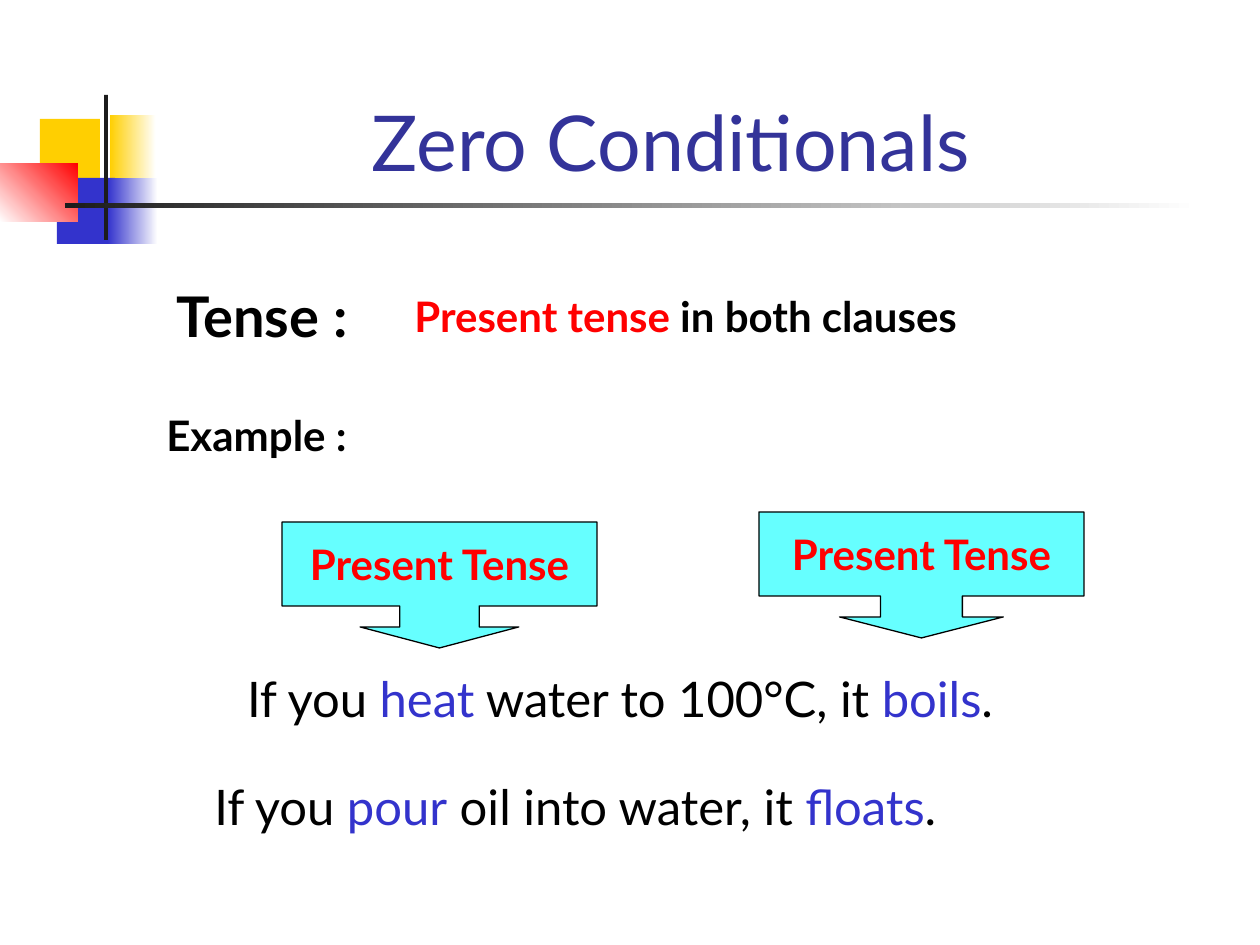
import pptx
import pptx.util
import pptx.dml.color
import pptx.enum.shapes
import pptx.enum.text
import pptx.oxml.ns
import lxml.etree

PX = 914400 / 126
BLACK, RED, BLUE = "000000", "FF0000", "3333CC"
YELLOW, WHITE, DARK = "FFCF01", "FFFFFF", "1C1C1C"
SHAPES = pptx.enum.shapes.MSO_SHAPE
ALIGN = pptx.enum.text.PP_ALIGN
ANCHOR = pptx.enum.text.MSO_ANCHOR


def rgb(color):
    return pptx.dml.color.RGBColor.from_string(color)


def write(tf, runs, size, bold=False, align=ALIGN.LEFT):
    """Fill the first paragraph with (text, color) runs."""
    p = tf.paragraphs[0]
    p.alignment = align
    for text, color in runs:
        r = p.add_run()
        r.text = text
        r.font.name = "Lato"
        r.font.size = pptx.util.Pt(size)
        r.font.bold = bold
        r.font.color.rgb = rgb(color)
    return p


prs = pptx.Presentation()
prs.slide_width = round(1260 * PX)
prs.slide_height = round(945 * PX)
slide = prs.slides.add_slide(prs.slide_layouts[1])
title, body = slide.placeholders

# Corner ornament: (box, colors from start to end, gradient angle)
ornament = [
    ((40, 119, 60, 65), [YELLOW], 0),
    ((110, 115, 46, 65), [YELLOW, WHITE], 0),
    ((57, 178, 58, 66), [BLUE], 0),
    ((108, 178, 50, 66), [BLUE, WHITE], 0),
    ((0, 163, 78, 59), [WHITE, RED], 45),
    ((104, 95, 4, 145), [DARK], 0),
    ((65, 203, 1134, 5), [DARK, WHITE], 0),
]
for box, colors, angle in ornament:
    sp = slide.shapes.add_shape(SHAPES.RECTANGLE, *[round(v * PX) for v in box])
    sp.shadow.inherit = False
    sp.line.fill.background()
    if len(colors) == 1:
        sp.fill.solid()
        sp.fill.fore_color.rgb = rgb(colors[0])
    else:
        sp.fill.gradient()
        sp.fill.gradient_angle = angle
        for stop, color, position in zip(sp.fill.gradient_stops, colors, (0, 1)):
            stop.color.rgb = rgb(color)
            stop.position = position

# Title and body
for sp, box in [(title, (134, 35, 1074, 158)), (body, (164, 275, 1071, 567))]:
    sp.left, sp.top, sp.width, sp.height = [round(v * PX) for v in box]
title.text_frame.vertical_anchor = ANCHOR.BOTTOM
write(title.text_frame, [("Zero Conditionals", "333399")], 44, align=ALIGN.CENTER)
p = write(body.text_frame, [("Tense :", BLACK)], 32, bold=True)
pPr = p._p.get_or_add_pPr()
pPr.set("marL", str(round(48 * PX)))
pPr.set("indent", str(round(-48 * PX)))
lxml.etree.SubElement(pPr, pptx.oxml.ns.qn("a:buNone"))

# Rule and example sentences: (box, runs, size, bold, align)
texts = [
    ((402, 284, 759, 63), [("Present tense", RED), (" in both clauses", BLACK)],
     24, True, ALIGN.LEFT),
    ((154, 403, 220, 63), [("Example :", BLACK)], 24, True, ALIGN.LEFT),
    ((94, 662, 1052, 72),
     [("If you", BLACK), (" heat", BLUE), (" water to 100°C, it ", BLACK),
      ("boils", BLUE), (".", BLACK)], 28, False, ALIGN.CENTER),
    ((202, 770, 939, 72),
     [("If you ", BLACK), ("pour", BLUE), (" oil into water, it ", BLACK),
      ("floats", BLUE), (".", BLACK)], 28, False, ALIGN.LEFT),
]
for box, runs, size, bold, align in texts:
    sp = slide.shapes.add_textbox(*[round(v * PX) for v in box])
    sp.text_frame.word_wrap = True
    write(sp.text_frame, runs, size, bold, align)

# Callouts pointing at the verbs
for box, shaft in [((282, 522, 315, 126), 0.63), ((759, 512, 325, 126), 0.65)]:
    sp = slide.shapes.add_shape(SHAPES.DOWN_ARROW_CALLOUT, *[round(v * PX) for v in box])
    for i, value in enumerate([shaft, shaft, 1 / 6, 2 / 3]):
        sp.adjustments[i] = value
    sp.shadow.inherit = False
    sp.fill.solid()
    sp.fill.fore_color.rgb = rgb("66FFFF")
    sp.line.color.rgb = rgb(BLACK)
    sp.line.width = pptx.util.Pt(0.75)
    tf = sp.text_frame
    tf.word_wrap = False
    tf.vertical_anchor = ANCHOR.MIDDLE
    write(tf, [("Present Tense", RED)], 24, True, ALIGN.CENTER)

prs.save("out.pptx")
